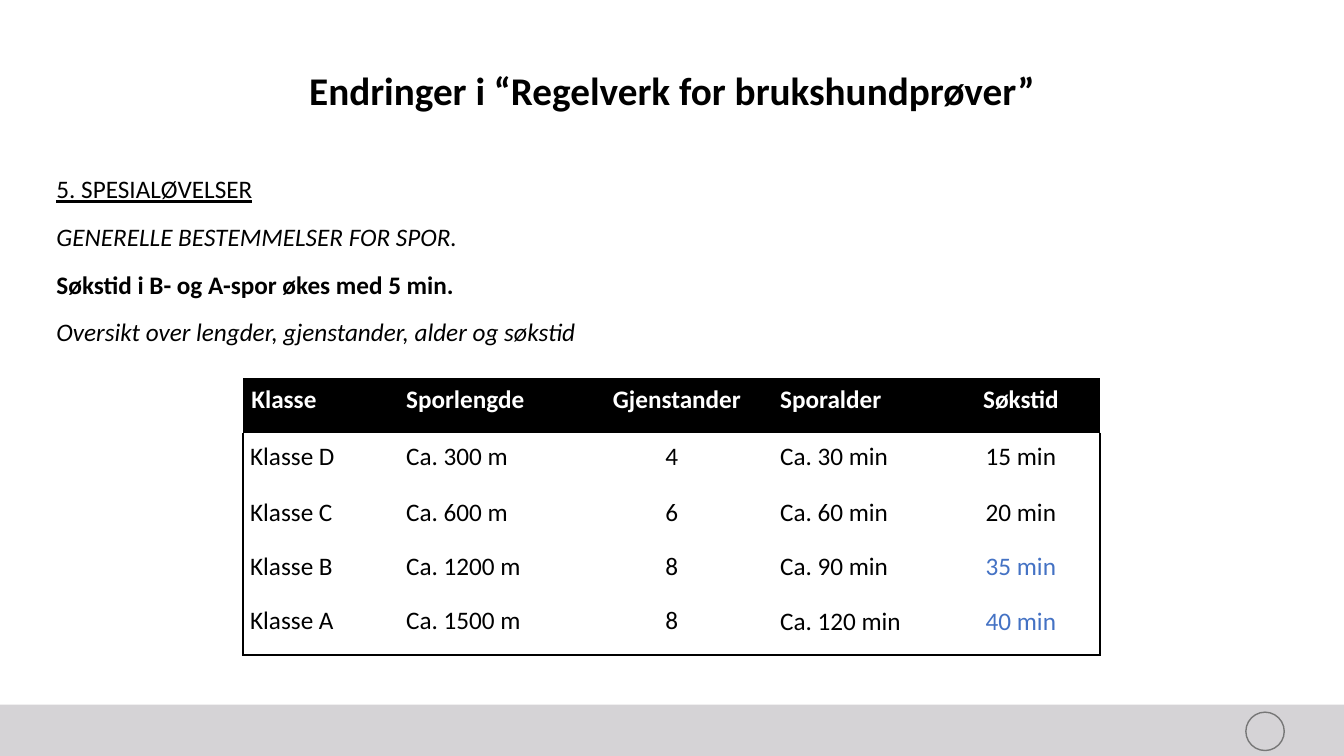
from lxml import etree
from pptx import Presentation
from pptx import util as u
from pptx.dml import color
from pptx.enum import shapes, text
from pptx.oxml import ns

Pt = u.Pt
FONT = "Calibri"
BLACK, WHITE, BLUE = "000000", "FFFFFF", "4472C4"
LEFT, WIDTH = 40.3, 879.1
COL_WIDTHS = [90, 142.6, 135.4, 113.4, 130.7]
ROW_HEIGHTS = [39, 42, 39, 39, 39]
LINE_HEIGHTS = [13.7, 14.6, 13.6, 13.6, 12.7]
INDENTS = [5.2, 26.6, 69.1, 15.8, 18]
HEADER_INDENTS = [6, 26.6, 31.7, 15.8, 18]
ROWS = [
    ["Klasse", "Sporlengde", "Gjenstander", "Sporalder", "Søkstid"],
    ["Klasse D", "Ca. 300 m", "4", "Ca. 30 min", "15 min"],
    ["Klasse C", "Ca. 600 m", "6", "Ca. 60 min", "20 min"],
    ["Klasse B", "Ca. 1200 m", "8", "Ca. 90 min", "35 min"],
    ["Klasse A", "Ca. 1500 m", "8", "Ca. 120 min", "40 min"],
]
INCREASED_TIMES = {"35 min", "40 min"}
NO_STYLE = "{2D5ABB26-0587-4C30-8999-92F81FD0307C}"


def rgb(value):
    return color.RGBColor.from_string(value)


def add_run(p, words, size, hex_color=BLACK, bold=False, italic=False, underline=False):
    r = p.add_run()
    r.text = words
    f = r.font
    f.name, f.size, f.bold, f.italic, f.underline = FONT, Pt(size), bold, italic, underline
    f.color.rgb = rgb(hex_color)


def add_shape(s, kind, box, fill=None, line=None):
    sp = s.shapes.add_shape(kind, *map(Pt, box))
    sp.shadow.inherit = False
    if fill:
        sp.fill.solid()
        sp.fill.fore_color.rgb = rgb(fill)
    else:
        sp.fill.background()
    if line:
        sp.line.color.rgb = rgb(line)
        sp.line.width = Pt(1)
    else:
        sp.line.fill.background()


def add_text(s, box, paragraphs, size, align=text.PP_ALIGN.LEFT,
             anchor=text.MSO_ANCHOR.TOP, before=0):
    """Each paragraph is a pair of its words and its run formatting."""
    tf = s.shapes.add_textbox(*map(Pt, box)).text_frame
    tf.word_wrap = True
    tf.vertical_anchor = anchor
    tf.margin_left = tf.margin_right = tf.margin_top = tf.margin_bottom = 0
    for i, (words, style) in enumerate(paragraphs):
        p = tf.add_paragraph() if i else tf.paragraphs[0]
        p.alignment, p.line_spacing, p.space_after = align, 1.07, Pt(8)
        p.space_before = Pt(before if i else 0)
        add_run(p, words, size, **style)


def add_border(cell, side):
    ln = etree.SubElement(cell._tc.get_or_add_tcPr(), ns.qn(f"a:ln{side}"), w=str(Pt(1.5)))
    fill = etree.SubElement(ln, ns.qn("a:solidFill"))
    etree.SubElement(fill, ns.qn("a:srgbClr"), val=BLACK)


def fill_cell(cell, words, row, col):
    header, last_col = row == 0, col == len(COL_WIDTHS) - 1
    last_row = row == len(ROWS) - 1
    cell.margin_left = cell.margin_right = cell.margin_top = cell.margin_bottom = 0
    cell.vertical_anchor = text.MSO_ANCHOR.MIDDLE
    for side, wanted in (("L", col == 0 and not header),
                         ("R", last_col and not header), ("B", last_row)):
        if wanted:
            add_border(cell, side)
    if header:
        cell.fill.solid()
        cell.fill.fore_color.rgb = rgb(BLACK)
    else:
        cell.fill.background()
    p = cell.text_frame.paragraphs[0]
    indent = (HEADER_INDENTS if header else INDENTS)[col]
    p._p.get_or_add_pPr().set("marL", str(Pt(indent)))
    p.alignment = text.PP_ALIGN.CENTER if last_col else text.PP_ALIGN.LEFT
    p.line_spacing = Pt(13.6 if last_row and col >= 3 else LINE_HEIGHTS[row])
    hex_color = WHITE if header else BLUE if words in INCREASED_TIMES else BLACK
    add_run(p, words, 18, hex_color, bold=header)


def add_track_table(s):
    frame = s.shapes.add_table(len(ROWS), len(COL_WIDTHS), Pt(173.5), Pt(270),
                               Pt(sum(COL_WIDTHS)), Pt(sum(ROW_HEIGHTS)))
    table = frame.table
    table.horz_banding = False
    table._tbl.tblPr.find(ns.qn("a:tableStyleId")).text = NO_STYLE
    for column, width in zip(table.columns, COL_WIDTHS):
        column.width = Pt(width)
    for i, (height, values) in enumerate(zip(ROW_HEIGHTS, ROWS)):
        table.rows[i].height = Pt(height)
        for j, words in enumerate(values):
            fill_cell(table.cell(i, j), words, i, j)


def main():
    prs = Presentation()
    prs.slide_width, prs.slide_height = Pt(960), Pt(540)
    s = prs.slides.add_slide(prs.slide_layouts[6])
    add_shape(s, shapes.MSO_SHAPE.RECTANGLE, (0, 503.3, 960, 36.7), fill="D5D3D6")
    add_shape(s, shapes.MSO_SHAPE.OVAL, (889.9, 508.7, 27.4, 27.4), line="777777")
    add_text(s, (LEFT, 46, WIDTH, 34.6),
             [("Endringer i “Regelverk for brukshundprøver”", {"bold": True})],
             28, text.PP_ALIGN.CENTER, text.MSO_ANCHOR.BOTTOM)
    add_text(s, (LEFT, 122.4, WIDTH, 363.6), [
        ("5. SPESIALØVELSER", {"underline": True}),
        ("GENERELLE BESTEMMELSER FOR SPOR.", {"italic": True}),
        ("Søkstid i B- og A-spor økes med 5 min.", {"bold": True}),
        ("Oversikt over lengder, gjenstander, alder og søkstid", {"italic": True}),
    ], 18, before=3)
    add_track_table(s)
    prs.save("out.pptx")


if __name__ == "__main__":
    main()
